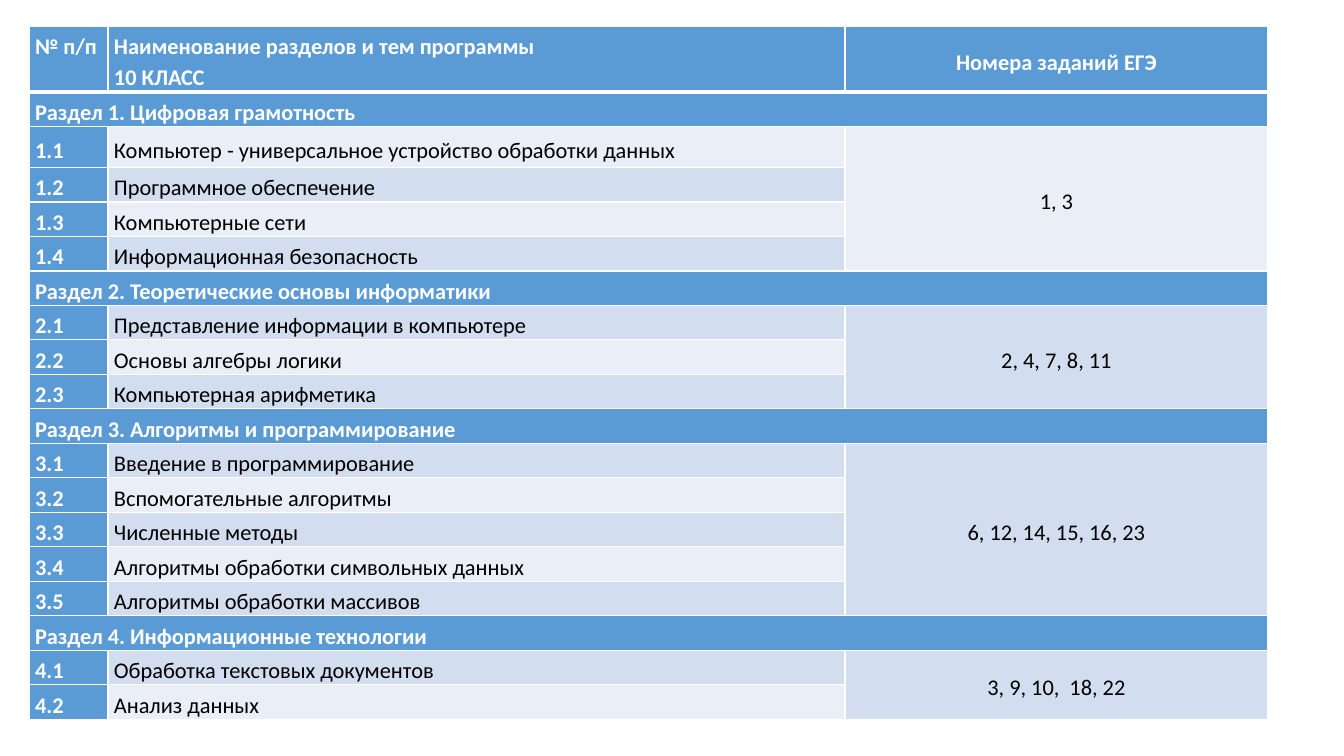
from lxml.etree import SubElement
from pptx import Presentation
from pptx.dml.color import RGBColor
from pptx.enum.text import MSO_ANCHOR, PP_ALIGN
from pptx.oxml.ns import qn
from pptx.util import Pt

SCALE = 12192000 / 1344
WHITE = RGBColor(0xFF, 0xFF, 0xFF)
BLACK = RGBColor(0x00, 0x00, 0x00)
BLUE = RGBColor(0x5B, 0x9B, 0xD5)
LIGHT_BAND = RGBColor(0xEA, 0xEF, 0xF7)
DARK_BAND = RGBColor(0xD2, 0xDE, 0xEF)

COLUMN_WIDTHS = [79, 737, 423]
HEADER_HEIGHT = 66
FIRST_TOPIC_HEIGHT = 41
ROW_HEIGHT = 34

SECTIONS = [
    ("Цифровая грамотность", "1, 3", [
        "Компьютер - универсальное устройство обработки данных",
        "Программное обеспечение",
        "Компьютерные сети",
        "Информационная безопасность",
    ]),
    ("Теоретические основы информатики", "2, 4, 7, 8, 11", [
        "Представление информации в компьютере",
        "Основы алгебры логики",
        "Компьютерная арифметика",
    ]),
    ("Алгоритмы и программирование", "6, 12, 14, 15, 16, 23", [
        "Введение в программирование",
        "Вспомогательные алгоритмы",
        "Численные методы",
        "Алгоритмы обработки символьных данных",
        "Алгоритмы обработки массивов",
    ]),
    ("Информационные технологии", "3, 9, 10,  18, 22", [
        "Обработка текстовых документов",
        "Анализ данных",
    ]),
]


def px(length):
    return round(length * SCALE)


def set_borders(cell, top=1, bottom=1):
    properties = cell._tc.get_or_add_tcPr()
    widths = {"a:lnL": 1, "a:lnR": 1, "a:lnT": top, "a:lnB": bottom}
    for position, (tag, width) in enumerate(widths.items()):
        line = SubElement(properties, qn(tag), w=str(Pt(width)))
        fill = SubElement(line, qn("a:solidFill"))
        SubElement(fill, qn("a:srgbClr"), val=str(WHITE))
        properties.insert(position, line)


def fill_cell(cell, lines, fill, color=WHITE, align=PP_ALIGN.LEFT, anchor=MSO_ANCHOR.MIDDLE):
    cell.fill.solid()
    cell.fill.fore_color.rgb = fill
    cell.vertical_anchor = anchor
    cell.margin_left = cell.margin_right = px(6)
    cell.margin_top, cell.margin_bottom = px(3), 0
    frame = cell.text_frame
    for index, line in enumerate(lines):
        para = frame.add_paragraph() if index else frame.paragraphs[0]
        para.alignment = align
        para.line_spacing = 1.15
        span = para.add_run()
        span.text = line
        span.font.name = "Calibri"
        span.font.size = Pt(16)
        span.font.bold = color == WHITE
        span.font.color.rgb = color


def band_color(row):
    return DARK_BAND if row % 2 else LIGHT_BAND


def add_header(table):
    fill_cell(table.cell(0, 0), ["№ п/п"], BLUE, anchor=MSO_ANCHOR.TOP)
    fill_cell(table.cell(0, 1), ["Наименование разделов и тем программы", "10 КЛАСС"], BLUE)
    fill_cell(table.cell(0, 2), ["Номера заданий ЕГЭ"], BLUE, align=PP_ALIGN.CENTER)


def add_section(table, row, number, title, tasks, topics):
    heading = table.cell(row, 0)
    heading.merge(table.cell(row, 2))
    fill_cell(heading, [f"Раздел {number}. {title}"], BLUE)
    first = row + 1
    for offset, topic in enumerate(topics):
        current = first + offset
        fill_cell(table.cell(current, 0), [f"{number}.{offset + 1}"], BLUE)
        fill_cell(table.cell(current, 1), [topic], band_color(current), BLACK)
    task_cell = table.cell(first, 2)
    task_cell.merge(table.cell(row + len(topics), 2))
    fill_cell(task_cell, [tasks], band_color(first), BLACK, PP_ALIGN.CENTER)
    return first + len(topics)


def add_programme_table(page):
    row_count = 1 + sum(1 + len(topics) for _, _, topics in SECTIONS)
    heights = [HEADER_HEIGHT, ROW_HEIGHT, FIRST_TOPIC_HEIGHT] + [ROW_HEIGHT] * (row_count - 3)
    table = page.shapes.add_table(
        row_count, len(COLUMN_WIDTHS), px(29), px(26), px(sum(COLUMN_WIDTHS)), px(sum(heights))
    ).table
    table.horz_banding = False
    for column, width in zip(table.columns, COLUMN_WIDTHS):
        column.width = px(width)
    for index, (row, height) in enumerate(zip(table.rows, heights)):
        row.height = px(height)
        for cell in row.cells:
            set_borders(cell, top=3 if index == 1 else 1, bottom=3 if index == 0 else 1)
    add_header(table)
    next_row = 1
    for number, (title, tasks, topics) in enumerate(SECTIONS, start=1):
        next_row = add_section(table, next_row, number, title, tasks, topics)


def main():
    deck = Presentation()
    deck.slide_width, deck.slide_height = px(1344), px(756)
    page = deck.slides.add_slide(deck.slide_layouts[6])
    add_programme_table(page)
    deck.save("out.pptx")


if __name__ == "__main__":
    main()
